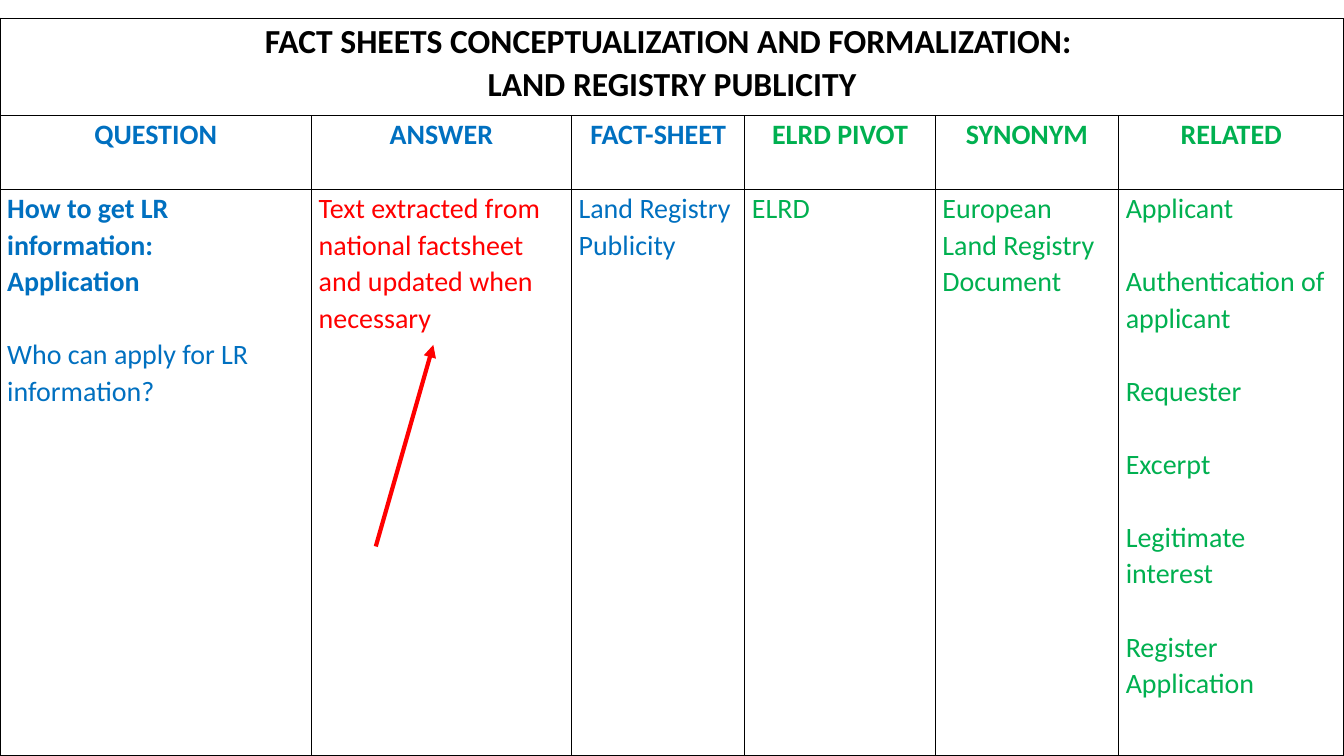
from lxml.etree import SubElement
from pptx import Presentation
from pptx.dml.color import RGBColor
from pptx.enum.shapes import MSO_CONNECTOR
from pptx.enum.text import PP_ALIGN
from pptx.oxml.ns import qn
from pptx.util import Cm, Pt

BLACK, BLUE, GREEN, RED, WHITE = "000000", "0070C0", "00B050", "FF0000", "FFFFFF"
COLUMN_WIDTHS = [7.85, 6.55, 4.37, 4.8, 4.62, 5.68]
ROW_HEIGHTS = [2.46, 1.85, 14.28]
BLANK_LINE = 26

TITLE = ["FACT SHEETS CONCEPTUALIZATION AND FORMALIZATION: ", "LAND REGISTRY PUBLICITY"]
HEADERS = [
    ("QUESTION", BLUE),
    ("ANSWER", BLUE),
    ("FACT-SHEET", BLUE),
    ("ELRD PIVOT", GREEN),
    ("SYNONYM", GREEN),
    ("RELATED", GREEN),
]
ENTRIES = [
    (["How to get LR information:", "Application", "Who can apply for LR information?"], BLUE),
    (["Text extracted from national factsheet and updated when necessary"], RED),
    (["Land Registry Publicity"], BLUE),
    (["ELRD"], GREEN),
    (["European Land Registry Document"], GREEN),
    (["Applicant", "Authentication of applicant", "Requester", "Excerpt",
      "Legitimate interest", "Register", "Application"], GREEN),
]
BOLD_ENTRIES = {0: {0, 1}}
GAPS_BEFORE = {0: {2}, 5: {1, 2, 3, 4, 5}}


def color(hex_value):
    return RGBColor.from_string(hex_value)


def add_borders(cell):
    properties = cell._tc.get_or_add_tcPr()
    for index, side in enumerate(("a:lnL", "a:lnR", "a:lnT", "a:lnB")):
        border = SubElement(properties, qn(side), w=str(Pt(1)))
        fill = SubElement(border, qn("a:solidFill"))
        SubElement(fill, qn("a:srgbClr"), val=BLACK)
        properties.insert(index, border)


def format_cell(cell):
    cell.margin_left = cell.margin_right = Cm(0.18)
    cell.margin_top = cell.margin_bottom = 0
    cell.fill.solid()
    cell.fill.fore_color.rgb = color(WHITE)
    add_borders(cell)


def write_cell(cell, lines, hex_value, size=20, alignment=PP_ALIGN.LEFT, bold=(), gaps=()):
    cell.text = "\n".join(lines)
    for index, paragraph in enumerate(cell.text_frame.paragraphs):
        paragraph.alignment = alignment
        paragraph.line_spacing = 1.07
        if index in gaps:
            paragraph.space_before = Pt(BLANK_LINE)
        font = paragraph.font
        font.name = "Calibri"
        font.size = Pt(size)
        font.bold = index in bold
        font.color.rgb = color(hex_value)


def add_fact_table(slide):
    frame = slide.shapes.add_table(
        len(ROW_HEIGHTS), len(COLUMN_WIDTHS), 0, Cm(0.46),
        Cm(sum(COLUMN_WIDTHS)), Cm(sum(ROW_HEIGHTS)))
    table = frame.table
    table.first_row = table.horz_banding = False
    for column, width in zip(table.columns, COLUMN_WIDTHS):
        column.width = Cm(width)
    for row, height in zip(table.rows, ROW_HEIGHTS):
        row.height = Cm(height)
    for cell in table.iter_cells():
        format_cell(cell)

    table.cell(0, 0).merge(table.cell(0, len(COLUMN_WIDTHS) - 1))
    write_cell(table.cell(0, 0), TITLE, BLACK, 24, PP_ALIGN.CENTER, bold={0, 1})
    for index, (header, hex_value) in enumerate(HEADERS):
        write_cell(table.cell(1, index), [header], hex_value,
                   alignment=PP_ALIGN.CENTER, bold={0})
    for index, (lines, hex_value) in enumerate(ENTRIES):
        write_cell(table.cell(2, index), lines, hex_value,
                   bold=BOLD_ENTRIES.get(index, ()), gaps=GAPS_BEFORE.get(index, ()))


def add_arrow(slide, start, end, hex_value, weight):
    arrow = slide.shapes.add_connector(
        MSO_CONNECTOR.STRAIGHT, *[Cm(value) for value in (*start, *end)])
    arrow.line.color.rgb = color(hex_value)
    arrow.line.width = Pt(weight)
    SubElement(arrow.line._get_or_add_ln(), qn("a:tailEnd"), type="triangle")
    SubElement(arrow._element.spPr, qn("a:effectLst"))


def main():
    presentation = Presentation()
    presentation.slide_width = Cm(33.87)
    presentation.slide_height = Cm(19.05)
    slide = presentation.slides.add_slide(presentation.slide_layouts[6])
    add_fact_table(slide)
    add_arrow(slide, (9.47, 13.77), (10.92, 8.69), RED, 3)
    presentation.save("out.pptx")


if __name__ == "__main__":
    main()
